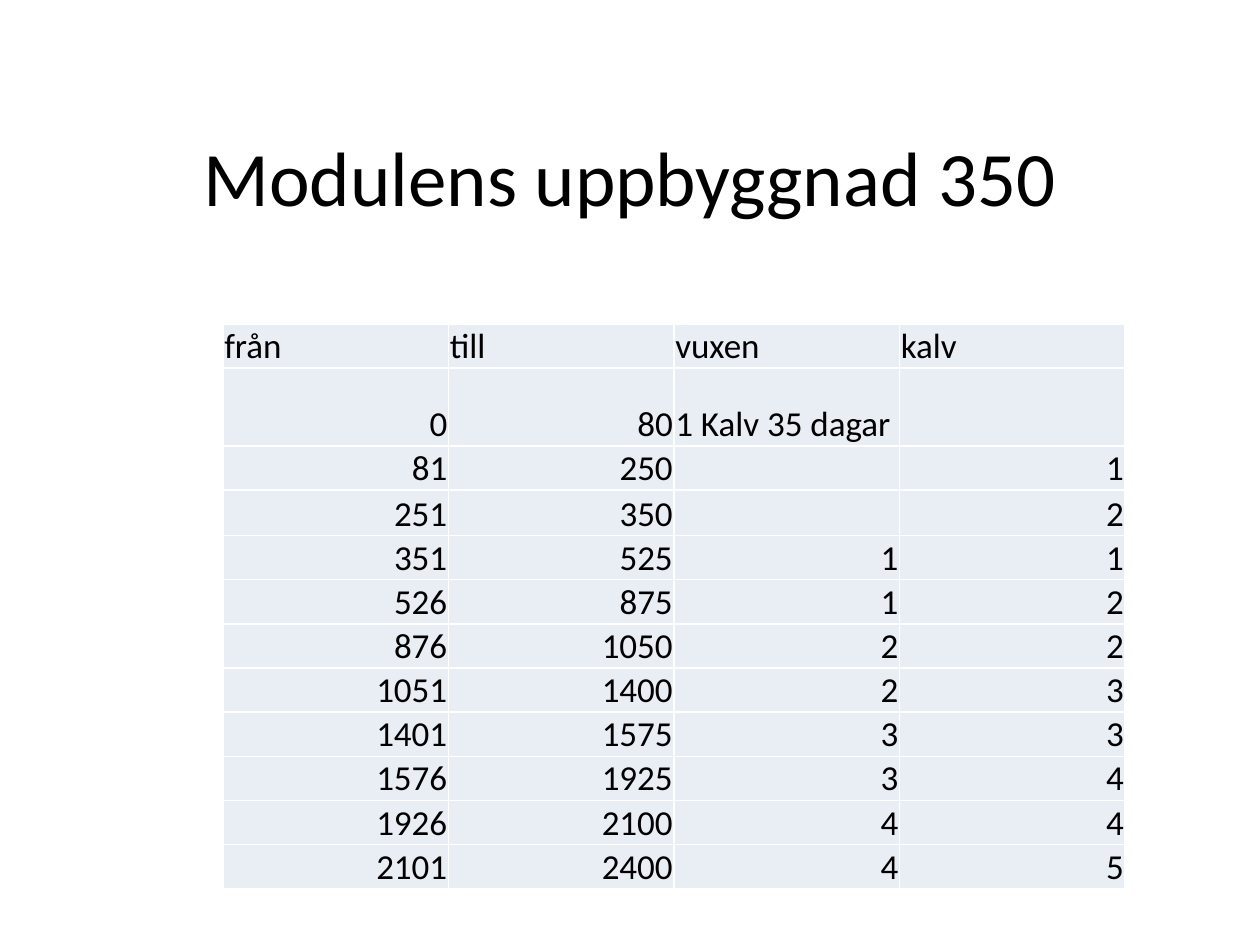
from lxml.etree import SubElement
from pptx import Presentation
from pptx.dml.color import RGBColor as RGB
from pptx.enum.text import MSO_ANCHOR as Anchor, PP_ALIGN as Align
from pptx.oxml.ns import qn
from pptx.util import Inches, Pt

TITLE = "Modulens uppbyggnad 350"
HEADINGS = ("från", "till", "vuxen", "kalv")
INTERVALS = [
    (0, 80, "1 Kalv 35 dagar", ""),
    (81, 250, "", 1),
    (251, 350, "", 2),
    (351, 525, 1, 1),
    (526, 875, 1, 2),
    (876, 1050, 2, 2),
    (1051, 1400, 2, 3),
    (1401, 1575, 3, 3),
    (1576, 1925, 3, 4),
    (1926, 2100, 4, 4),
    (2101, 2400, 4, 5),
]
THEME = {
    "font": "Calibri",
    "text": "000000",
    "cell": "E9EDF4",
    "border": "FFFFFF",
    "title_size": 44,
    "table_size": 20,
}
COLUMN_WIDTH = 1.79
ROW_HEIGHT = 0.33
SPECIAL_HEIGHTS = {0: 0.27, 1: 0.62, 3: 0.36}


def write(frame, text, size, align=Align.LEFT):
    paragraph = frame.paragraphs[0]
    paragraph.alignment = align
    run = paragraph.add_run()
    run.text = text
    run.font.name = THEME["font"]
    run.font.size = Pt(size)
    run.font.color.rgb = RGB.from_string(THEME["text"])


def style_cell(cell):
    cell.vertical_anchor = Anchor.BOTTOM
    cell.margin_left = cell.margin_right = cell.margin_top = Inches(0.01)
    cell.margin_bottom = 0
    properties = cell._tc.get_or_add_tcPr()
    for side in ("a:lnL", "a:lnR", "a:lnT", "a:lnB"):
        border = SubElement(properties, qn(side), w=str(Pt(1)))
        border_fill = SubElement(border, qn("a:solidFill"))
        SubElement(border_fill, qn("a:srgbClr"), val=THEME["border"])
    cell.fill.solid()
    cell.fill.fore_color.rgb = RGB.from_string(THEME["cell"])


def add_title(slide):
    title = slide.shapes.title
    title.left, title.top = Inches(0.5), Inches(0.3)
    title.width, title.height = Inches(9), Inches(2.19)
    title.text_frame.vertical_anchor = Anchor.MIDDLE
    write(title.text_frame, TITLE, THEME["title_size"], align=Align.CENTER)


def add_intervals(slide):
    rows = [HEADINGS, *INTERVALS]
    heights = [SPECIAL_HEIGHTS.get(i, ROW_HEIGHT) for i in range(len(rows))]
    table = slide.shapes.add_table(
        len(rows), len(HEADINGS), Inches(1.77), Inches(2.57),
        Inches(COLUMN_WIDTH * len(HEADINGS)), Inches(sum(heights)),
    ).table
    table.first_row = table.horz_banding = False
    for column in table.columns:
        column.width = Inches(COLUMN_WIDTH)
    for r, (values, height) in enumerate(zip(rows, heights)):
        table.rows[r].height = Inches(height)
        for c, value in enumerate(values):
            cell = table.cell(r, c)
            style_cell(cell)
            if value != "":
                align = Align.RIGHT if isinstance(value, int) else Align.LEFT
                write(cell.text_frame, str(value), THEME["table_size"], align=align)


def main():
    deck = Presentation()
    deck.slide_width, deck.slide_height = Inches(10), Inches(7.5)
    slide = deck.slides.add_slide(deck.slide_layouts[5])
    add_title(slide)
    add_intervals(slide)
    deck.save("out.pptx")


if __name__ == "__main__":
    main()
